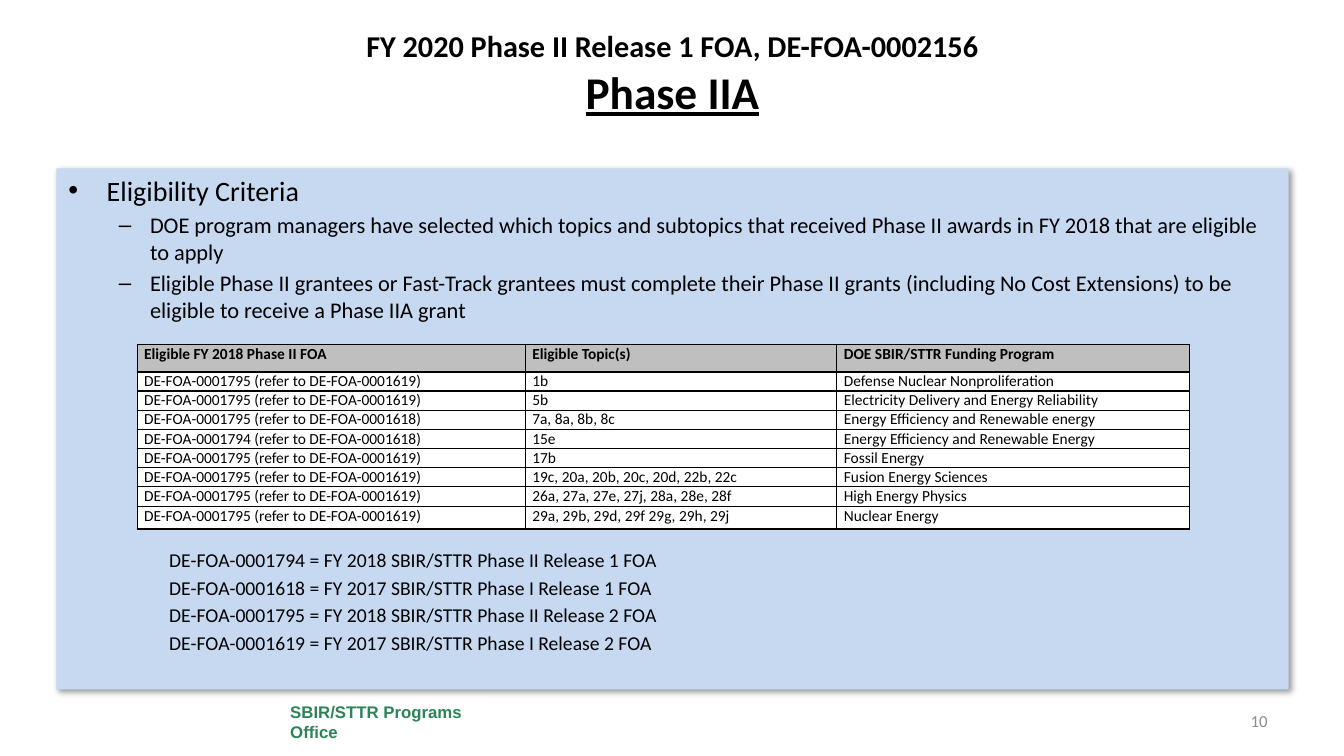
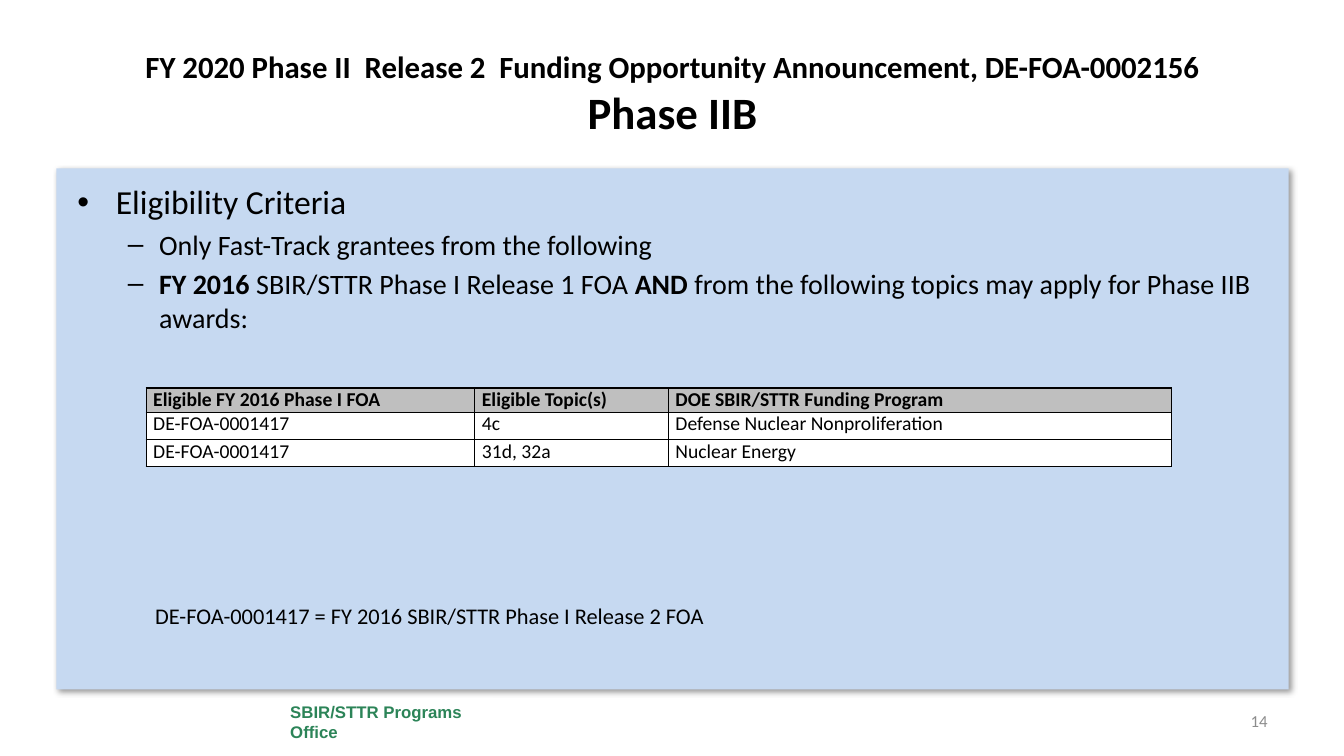
from lxml import etree
from pptx import Presentation
from pptx.dml.color import RGBColor
from pptx.enum.shapes import MSO_SHAPE
from pptx.enum.text import MSO_ANCHOR, PP_ALIGN
from pptx.oxml.ns import qn
from pptx.util import Inches, Pt

RECTANGLE = MSO_SHAPE.RECTANGLE
TOP, MIDDLE = MSO_ANCHOR.TOP, MSO_ANCHOR.MIDDLE
LEFT, CENTER, RIGHT = PP_ALIGN.LEFT, PP_ALIGN.CENTER, PP_ALIGN.RIGHT
BLANK_LAYOUT = 6


def color(value):
    return RGBColor.from_string(value)


def add_element(parent, tag, **attributes):
    return etree.SubElement(parent, qn(tag), attributes)


class Deck:
    """Hold the shared style and the slide being built."""

    BLACK, WHITE, PANEL = "000000", "FFFFFF", "C6D9F1"
    HEADER, GREEN, GRAY = "BFBFBF", "2C8458", "8C8C8C"
    BULLETS = (("•", 0.38, -0.38), ("–", 0.81, -0.31))
    SPACE_RATIO = 0.2

    def __init__(self):
        self.presentation = Presentation()
        self.presentation.slide_width = Inches(13.33)
        self.presentation.slide_height = Inches(7.5)
        self.slide = None

    def add_slide(self, number):
        layout = self.presentation.slide_layouts[BLANK_LAYOUT]
        self.slide = self.presentation.slides.add_slide(layout)
        panel = self.rectangle((0.56, 1.67, 12.22, 5.17), self.PANEL)
        self.cast_shadow(panel)
        footer = self.rectangle((2.78, 6.92, 2.11, 0.48), self.WHITE)
        self.prepare_frame(footer.text_frame, MIDDLE)
        paragraph = footer.text_frame.paragraphs[0]
        paragraph.alignment = LEFT
        self.styled_run(paragraph, "SBIR/STTR Programs Office", 12,
                        bold=True, name="Arial", fill=self.GREEN)
        frame = self.text_box((10.56, 6.95, 2.11, 0.4), MIDDLE)
        frame.paragraphs[0].alignment = RIGHT
        self.styled_run(frame.paragraphs[0], str(number), 12, fill=self.GRAY)

    def rectangle(self, box, fill):
        shape = self.slide.shapes.add_shape(RECTANGLE, *map(Inches, box))
        shape.shadow.inherit = False
        shape.fill.solid()
        shape.fill.fore_color.rgb = color(fill)
        shape.line.fill.background()
        return shape

    def cast_shadow(self, shape):
        effects = shape._element.spPr.find(qn("a:effectLst"))
        shadow = add_element(effects, "a:outerShdw", blurRad=str(Pt(4)), dist=str(Pt(3)),
                             dir=str(45 * 60000), algn="tl", rotWithShape="0")
        tint = add_element(shadow, "a:srgbClr", val=self.BLACK)
        add_element(tint, "a:alpha", val="40000")

    def prepare_frame(self, frame, anchor):
        frame.word_wrap = True
        frame.vertical_anchor = anchor

    def text_box(self, box, anchor=TOP):
        frame = self.slide.shapes.add_textbox(*map(Inches, box)).text_frame
        self.prepare_frame(frame, anchor)
        return frame

    def styled_run(self, paragraph, text, size, fill=BLACK, name="Calibri", **values):
        run = paragraph.add_run()
        run.text = text
        values.update(size=Pt(size), name=name)
        for attribute, value in values.items():
            setattr(run.font, attribute, value)
        run.font.color.rgb = color(fill)

    def next_paragraph(self, frame, index, size):
        if index == 0:
            return frame.paragraphs[0]
        paragraph = frame.add_paragraph()
        paragraph.space_before = Pt(round(size * self.SPACE_RATIO, 1))
        return paragraph

    def title(self, box, lines, sizes, underline=False):
        paragraph = self.text_box(box, MIDDLE).paragraphs[0]
        paragraph.alignment = CENTER
        self.styled_run(paragraph, lines[0], sizes[0], bold=True)
        paragraph.add_line_break()
        self.styled_run(paragraph, lines[1], sizes[1], bold=True, underline=underline)

    def bullets(self, box, items, sizes):
        frame = self.text_box(box)
        for index, (level, runs) in enumerate(items):
            paragraph = self.next_paragraph(frame, index, sizes[level])
            paragraph.level = level
            character, margin, indent = self.BULLETS[level]
            properties = paragraph._p.get_or_add_pPr()
            properties.set("marL", str(Inches(margin)))
            properties.set("indent", str(Inches(indent)))
            add_element(properties, "a:buFont", typeface="Arial")
            add_element(properties, "a:buChar", char=character)
            for text, bold in runs:
                self.styled_run(paragraph, text, sizes[level], bold=bold)

    def lines(self, box, texts, size):
        frame = self.text_box(box)
        for index, text in enumerate(texts):
            self.styled_run(self.next_paragraph(frame, index, size), text, size)

    def table(self, left, top, widths, heights, rows, size, header_anchor=TOP):
        box = map(Inches, (left, top, sum(widths), sum(heights)))
        table = self.slide.shapes.add_table(len(rows), len(widths), *box).table
        table.first_row = table.horz_banding = False
        for column, width in zip(table.columns, widths):
            column.width = Inches(width)
        for row_index, (texts, height) in enumerate(zip(rows, heights)):
            table.rows[row_index].height = Inches(height)
            for column_index, text in enumerate(texts):
                cell = table.cell(row_index, column_index)
                self.fill_cell(cell, text, size, row_index == 0, header_anchor)

    def fill_cell(self, cell, text, size, is_header, header_anchor):
        cell.margin_left = cell.margin_right = Inches(0.07)
        cell.margin_top = cell.margin_bottom = 0
        cell.vertical_anchor = header_anchor if is_header else TOP
        properties = cell._tc.get_or_add_tcPr()
        for side in "LRTB":
            border = add_element(properties, f"a:ln{side}", w=str(Pt(1)))
            solid = add_element(border, "a:solidFill")
            add_element(solid, "a:srgbClr", val=self.BLACK)
        cell.fill.solid()
        cell.fill.fore_color.rgb = color(self.HEADER if is_header else self.WHITE)
        self.styled_run(cell.text_frame.paragraphs[0], text, size, bold=is_header)


def build_phase_iia(deck):
    deck.add_slide(10)
    deck.title((0.67, 0.3, 12, 0.85),
               ("FY 2020 Phase II Release 1 FOA, DE-FOA-0002156", "Phase IIA"),
               (21.6, 32.4), underline=True)
    deck.bullets((0.58, 1.67, 12, 1.7), [
        (0, [("Eligibility Criteria", False)]),
        (1, [("DOE program managers have selected which topics and subtopics that received "
              "Phase II awards in FY 2018 that are eligible to apply", False)]),
        (1, [("Eligible Phase II grantees or Fast-Track grantees must complete their Phase II "
              "grants (including No Cost Extensions) to be eligible to receive a Phase IIA grant",
              False)]),
    ], (20, 16))
    deck.lines((1.58, 5.39, 7, 1.2), [
        "DE-FOA-0001794 = FY 2018 SBIR/STTR Phase II Release 1 FOA",
        "DE-FOA-0001618 = FY 2017 SBIR/STTR Phase I Release 1 FOA",
        "DE-FOA-0001795 = FY 2018 SBIR/STTR Phase II Release 2 FOA",
        "DE-FOA-0001619 = FY 2017 SBIR/STTR Phase I Release 2 FOA",
    ], 14)
    deck.table(1.36, 3.42, (3.85, 3.09, 3.5), [0.27] + [0.19] * 6 + [0.2, 0.22], [
        ("Eligible FY 2018 Phase II FOA", "Eligible Topic(s)", "DOE SBIR/STTR Funding Program"),
        ("DE-FOA-0001795 (refer to DE-FOA-0001619)", "1b", "Defense Nuclear Nonproliferation"),
        ("DE-FOA-0001795 (refer to DE-FOA-0001619)", "5b",
         "Electricity Delivery and Energy Reliability"),
        ("DE-FOA-0001795 (refer to DE-FOA-0001618)", "7a, 8a, 8b, 8c",
         "Energy Efficiency and Renewable energy"),
        ("DE-FOA-0001794 (refer to DE-FOA-0001618)", "15e",
         "Energy Efficiency and Renewable Energy"),
        ("DE-FOA-0001795 (refer to DE-FOA-0001619)", "17b", "Fossil Energy"),
        ("DE-FOA-0001795 (refer to DE-FOA-0001619)", "19c, 20a, 20b, 20c, 20d, 22b, 22c",
         "Fusion Energy Sciences"),
        ("DE-FOA-0001795 (refer to DE-FOA-0001619)", "26a, 27a, 27e, 27j, 28a, 28e, 28f",
         "High Energy Physics"),
        ("DE-FOA-0001795 (refer to DE-FOA-0001619)", "29a, 29b, 29d, 29f 29g, 29h, 29j",
         "Nuclear Energy"),
    ], 11)


def build_phase_iib(deck):
    deck.add_slide(14)
    deck.title((0.67, 0.3, 12, 1.25),
               ("FY 2020 Phase II  Release 2  Funding Opportunity Announcement, DE-FOA-0002156",
                "Phase IIB"), (22, 32))
    deck.bullets((0.67, 1.75, 12, 4.95), [
        (0, [("Eligibility Criteria", False)]),
        (1, [("Only Fast-Track grantees from the following", False)]),
        (1, [("FY 2016 ", True), ("SBIR/STTR Phase I Release 1 FOA ", False), ("AND", True),
             (" from the following topics may apply for Phase IIB awards:", False)]),
    ], (24, 20))
    deck.table(1.45, 3.85, (3.26, 1.92, 4.99), (0.24, 0.27, 0.27), [
        ("Eligible FY 2016 Phase I FOA", "Eligible Topic(s)", "DOE SBIR/STTR Funding Program"),
        ("DE-FOA-0001417", "4c", "Defense Nuclear Nonproliferation"),
        ("DE-FOA-0001417", "31d, 32a", "Nuclear Energy"),
    ], 14, header_anchor=MIDDLE)
    deck.lines((1.44, 5.92, 7, 0.37),
               ["DE-FOA-0001417 = FY 2016 SBIR/STTR Phase I Release 2 FOA"], 16)


def main():
    deck = Deck()
    build_phase_iia(deck)
    build_phase_iib(deck)
    deck.presentation.save("out.pptx")


if __name__ == "__main__":
    main()
